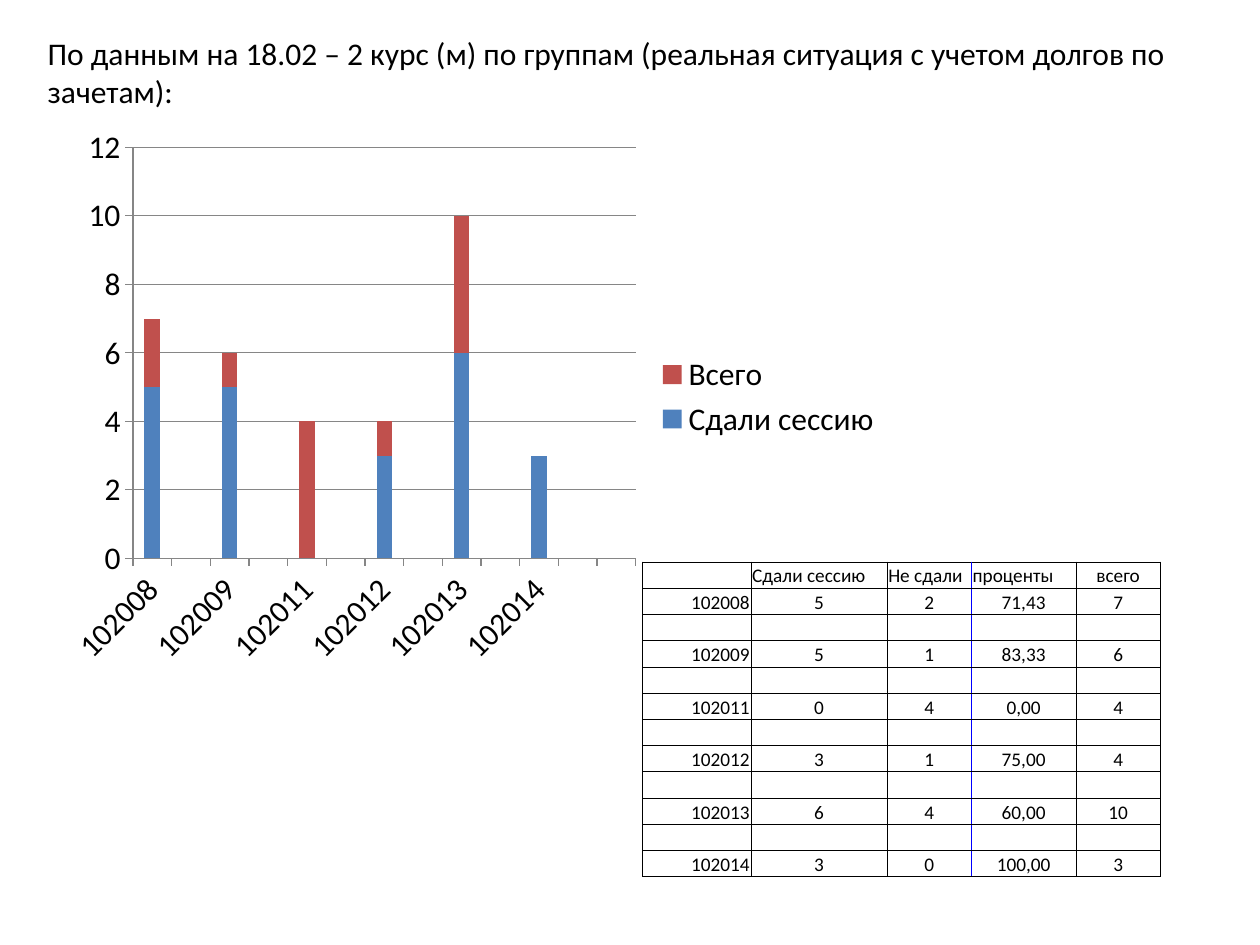
from lxml import etree
from pptx import Presentation
from pptx.chart.data import CategoryChartData
from pptx.dml.color import RGBColor
from pptx.enum.chart import XL_CHART_TYPE as CT, XL_LEGEND_POSITION as LP, XL_TICK_MARK as TM
from pptx.enum.text import MSO_ANCHOR, MSO_AUTO_SIZE, PP_ALIGN
from pptx.oxml import parse_xml
from pptx.oxml.ns import nsdecls, qn
from pptx.util import Inches, Pt


def rgb(h):
    return RGBColor.from_string(h)


def set_font(font, size):
    for k, v in {"name": "Calibri", "size": Pt(size)}.items():
        setattr(font, k, v)
    font.color.rgb = rgb("000000")


prs = Presentation()
prs.slide_width, prs.slide_height = Inches(10), Inches(7.5)
s = prs.slides.add_slide(prs.slide_layouts[6])

groups = [
    ("102008", 5, 2, "71,43", 7),
    ("102009", 5, 1, "83,33", 6),
    ("102011", 0, 4, "0,00", 4),
    ("102012", 3, 1, "75,00", 4),
    ("102013", 6, 4, "60,00", 10),
    ("102014", 3, 0, "100,00", 3),
]
cats, passed, total = [], [], []
for name, ok, rest, percent, count in groups:
    cats += [name, ""]
    passed += [ok, None]
    total += [rest, None]

cd = CategoryChartData()
cd.categories = cats + [""]
cd.add_series("Сдали сессию", passed + [None])
cd.add_series("Всего", total + [None])
chart = s.shapes.add_chart(CT.COLUMN_STACKED, Inches(0.43), Inches(0.93),
                           Inches(6.67), Inches(4.44), cd).chart
set_font(chart.font, 18)
chart.has_title = False
chart.has_legend = True
for k, v in {"position": LP.RIGHT, "include_in_layout": False}.items():
    setattr(chart.legend, k, v)
plot = chart.plots[0]
for k, v in {"gap_width": 150, "overlap": 100, "vary_by_categories": False}.items():
    setattr(plot, k, v)
for ser, color in zip(plot.series, ["4F81BD", "C0504D"]):
    ser.format.fill.solid()
    ser.format.fill.fore_color.rgb = rgb(color)
for ax in (chart.category_axis, chart.value_axis):
    ax.major_tick_mark = TM.OUTSIDE
    ax.format.line.color.rgb = rgb("868686")
chart.value_axis.major_gridlines.format.line.color.rgb = rgb("868686")

tf = s.shapes.add_textbox(Inches(0.28), Inches(0.22), Inches(9.72), Inches(0.71)).text_frame
for k, v in {"word_wrap": True, "auto_size": MSO_AUTO_SIZE.SHAPE_TO_FIT_TEXT}.items():
    setattr(tf, k, v)
r = tf.paragraphs[0].add_run()
r.text = "По данным на 18.02 – 2 курс (м) по группам (реальная ситуация с учетом долгов по зачетам):"
set_font(r.font, 18)

rows = [("", "Сдали сессию", "Не сдали", "проценты", "всего")]
for group in groups:
    rows += [group, ("",) * 5]
rows.pop()

widths = [0.86, 1.08, 0.67, 0.83, 0.67]
tbl = s.shapes.add_table(len(rows), len(widths), Inches(5.1), Inches(4.46),
                         Inches(4.11), Inches(2.5)).table
tbl.first_row = tbl.horz_banding = False
for col, w in zip(tbl.columns, widths):
    col.width = Inches(w)
cell_format = {"vertical_anchor": MSO_ANCHOR.BOTTOM, "margin_left": Inches(0.01),
               "margin_right": Inches(0.01), "margin_top": Inches(0.01), "margin_bottom": 0}
for i, row in enumerate(rows):
    tbl.rows[i].height = Inches(2.5 / len(rows))
    for j, value in enumerate(row):
        cell = tbl.cell(i, j)
        for k, v in cell_format.items():
            setattr(cell, k, v)
        cell.fill.background()
        p = cell.text_frame.paragraphs[0]
        if j == 0:
            p.alignment = PP_ALIGN.RIGHT
        elif i > 0 or j == 4:
            p.alignment = PP_ALIGN.CENTER
        if value == "":
            etree.SubElement(p._p, qn("a:endParaRPr"), sz="1100")
        else:
            r = p.add_run()
            r.text = str(value)
            set_font(r.font, 11)
        tcPr = cell._tc.get_or_add_tcPr()
        for n, side in enumerate("LRTB"):
            color = "0000FF" if (j, side) in ((2, "R"), (3, "L")) else "000000"
            tcPr.insert(n, parse_xml(
                f'<a:ln{side} {nsdecls("a")} w="6350"><a:solidFill>'
                f'<a:srgbClr val="{color}"/></a:solidFill></a:ln{side}>'))

prs.save("out.pptx")
